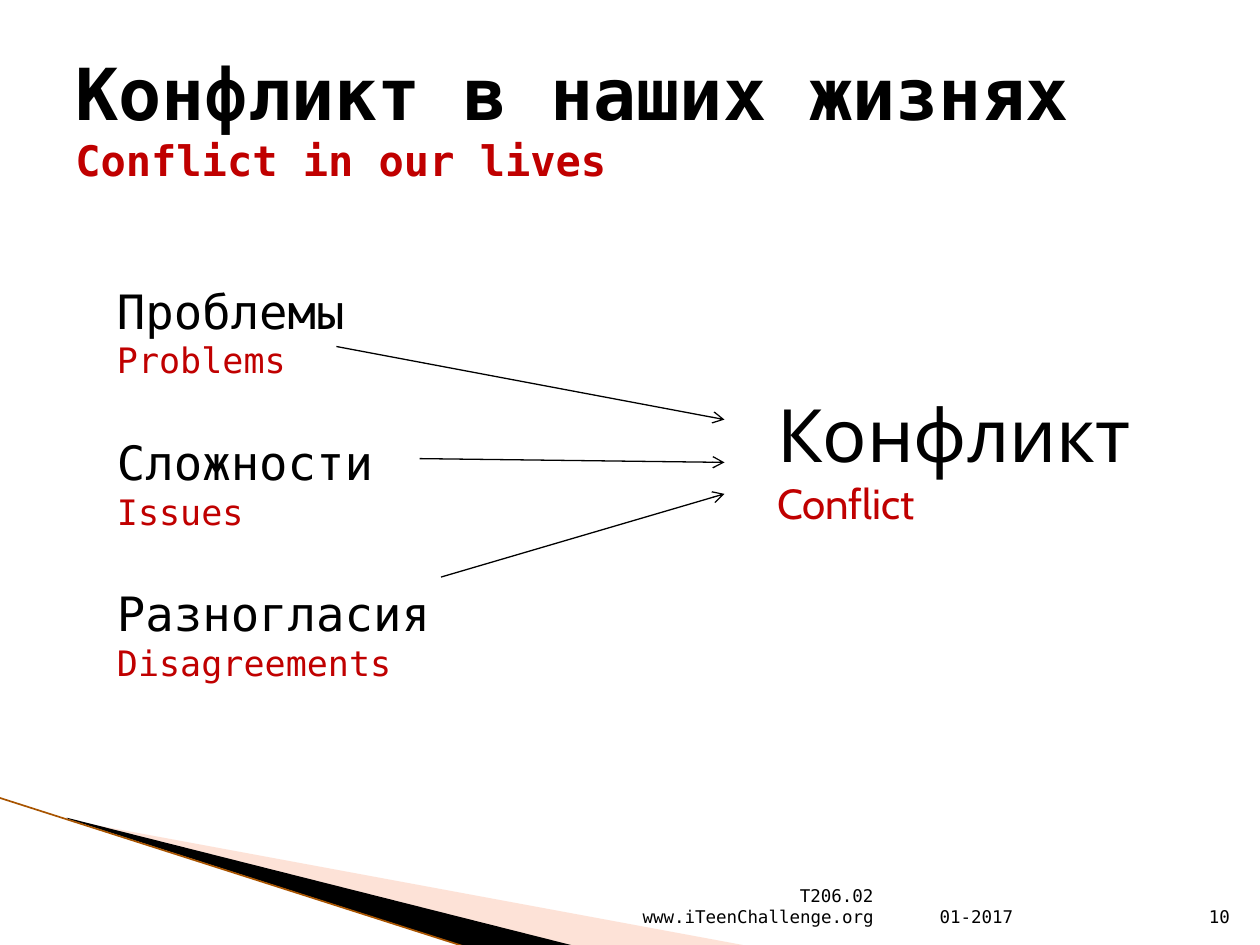
from lxml import etree
from pptx import Presentation
from pptx.dml.color import RGBColor
from pptx.enum.shapes import MSO_CONNECTOR as CONN
from pptx.enum.text import MSO_ANCHOR as ANCHOR, PP_ALIGN as ALIGN
from pptx.oxml import parse_xml
from pptx.oxml.ns import nsdecls, qn
from pptx.util import Inches, Pt

COLORS = {"ink": "000000", "red": "C00000", "peach": "FCB79B", "edge": "A85400"}
MONO, SANS = "DejaVu Sans Mono", "Cabin"


def rgb(name):
    return RGBColor.from_string(COLORS[name])


def add_box(slide, box, anchor=ANCHOR.TOP):
    tf = slide.shapes.add_textbox(*map(Inches, box)).text_frame
    tf.word_wrap = True
    tf.vertical_anchor = anchor
    return tf


def add_run(p, text, size, color):
    r = p.add_run()
    r.text = text
    r.font.size = Pt(size)
    r.font.color.rgb = rgb(color)


def add_pair(p, russian, english, sizes, font, bold=False):
    """Russian line with its English translation below."""
    p.font.name, p.font.bold = font, bold
    add_run(p, russian, sizes[0], "ink")
    p.add_line_break()
    add_run(p, english, sizes[1], "red")
    for r in p.runs:
        r.font.name, r.font.bold = font, bold


def add_line(slide, start, end, color, width, arrow=False):
    line = slide.shapes.add_connector(CONN.STRAIGHT, *map(Inches, start + end))
    line.line.color.rgb = rgb(color)
    line.line.width = Pt(width)
    if arrow:
        line.line._get_or_add_ln().append(
            parse_xml(f'<a:tailEnd type="arrow" {nsdecls("a")}/>'))
    etree.SubElement(line._element.spPr, qn("a:effectLst"))


def add_wedge(slide, points, color, alpha=None):
    pts = [(Inches(x), Inches(y)) for x, y in points]
    builder = slide.shapes.build_freeform(*pts[0])
    builder.add_line_segments(pts[1:], close=True)
    s = builder.convert_to_shape()
    s.shadow.inherit = False
    s.fill.solid()
    s.fill.fore_color.rgb = rgb(color)
    s.line.fill.background()
    if alpha:
        clr = s._element.spPr.find(".//" + qn("a:srgbClr"))
        etree.SubElement(clr, qn("a:alpha"), val=str(alpha * 1000))


def add_corner(slide, left, top):
    """Wedges and edge line in the bottom left corner."""
    def place(points):
        return [(left + x, top + y) for x, y in points]

    add_wedge(slide, place([(0.55, 0.18), (5.95, 1.18), (4.56, 1.18), (0.55, 0.17)]),
              "peach", 40)
    add_wedge(slide, place([(0.53, 0.16), (4.57, 1.18), (3.72, 1.19), (0.54, 0.17)]),
              "ink")
    add_line(slide, *place([(-0.01, 0), (3.71, 1.19)]), "edge", 0.95)


def add_title(slide, box):
    tf = add_box(slide, box, ANCHOR.MIDDLE)
    add_pair(tf.paragraphs[0], "Конфликт в наших жизнях", "Conflict in our lives",
             (41, 24), MONO, bold=True)


def add_causes(slide, box):
    tf = add_box(slide, box)
    causes = [("Проблемы", "Problems"), ("Сложности", "Issues"),
              ("Разногласия", "Disagreements")]
    for i, (russian, english) in enumerate(causes):
        p = tf.add_paragraph() if i else tf.paragraphs[0]
        p.space_before = Pt(4 if i else 0)
        p.space_after = Pt(26)
        add_pair(p, russian, english, (27, 20), MONO)


def add_result(slide, box):
    add_pair(add_box(slide, box).paragraphs[0], "Конфликт", "Conflict", (42, 24), SANS)


def add_arrows(slide):
    for start, end in [((2.67, 2.75), (5.75, 3.33)), ((3.33, 3.64), (5.75, 3.67)),
                       ((3.5, 4.58), (5.75, 3.92))]:
        add_line(slide, start, end, "ink", 0.75, arrow=True)


def add_footer(slide, top, height):
    parts = [(7.36, 2.1, ["01-2017"], ALIGN.LEFT),
             (4.79, 2.57, ["T206.02", "www.iTeenChallenge.org"], ALIGN.RIGHT),
             (9.46, 0.4, ["10"], ALIGN.RIGHT)]
    for left, width, lines, align in parts:
        tf = add_box(slide, (left, top, width, height), ANCHOR.BOTTOM)
        for i, text in enumerate(lines):
            p = tf.add_paragraph() if i else tf.paragraphs[0]
            # The course code is set in from the right edge
            if i < len(lines) - 1:
                p._p.get_or_add_pPr().set("marR", str(Inches(0.33)))
            p.text, p.alignment = text, align
            p.font.name, p.font.size = MONO, Pt(10)
            p.font.color.rgb = rgb("ink")


def main():
    prs = Presentation()
    prs.slide_width, prs.slide_height = Inches(10), Inches(7.5)
    slide = prs.slides.add_slide(prs.slide_layouts[6])
    add_corner(slide, 0, 6.33)
    add_causes(slide, (0.83, 2.19, 9, 3.67))
    add_title(slide, (0.5, 0.3, 9, 1.25))
    add_arrows(slide)
    add_result(slide, (6.07, 3.04, 3.09, 1.21))
    add_footer(slide, 7.01, 0.4)
    prs.save("out.pptx")


if __name__ == "__main__":
    main()
